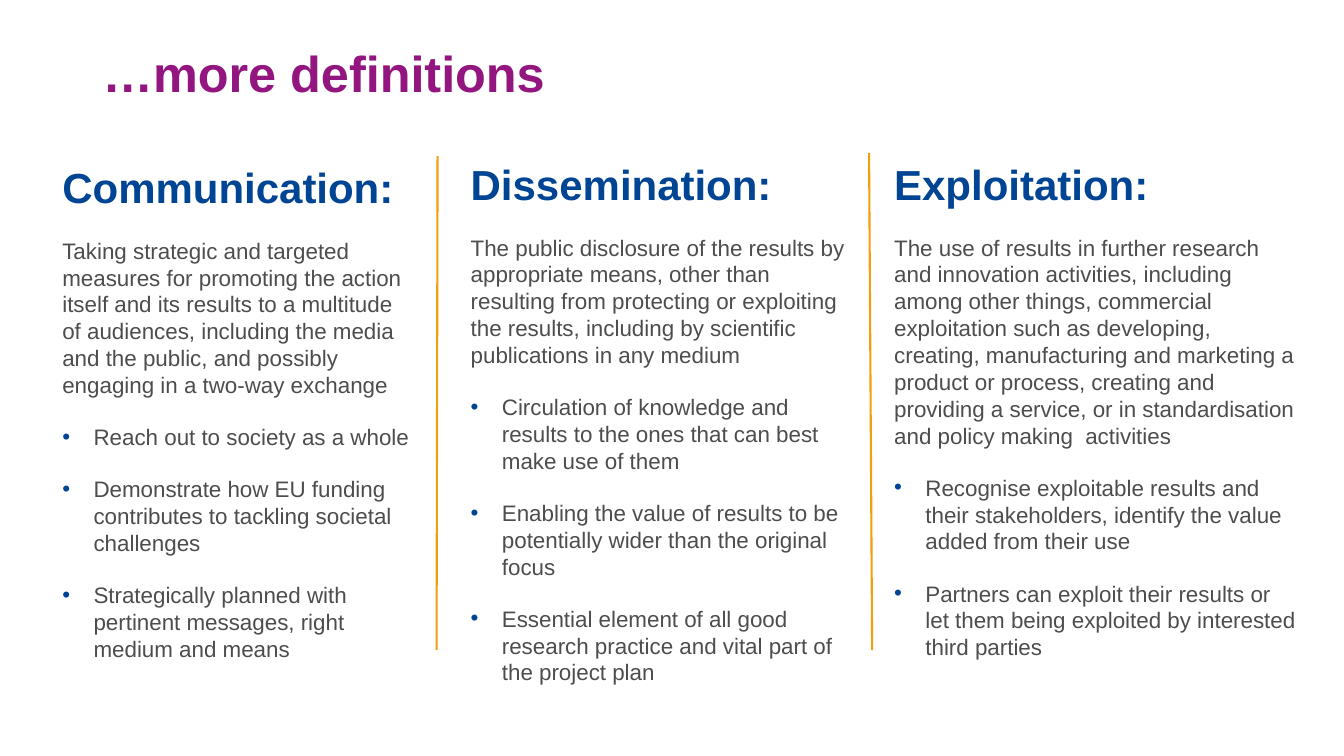
from lxml import etree
from pptx import Presentation
from pptx.dml.color import RGBColor
from pptx.enum.shapes import MSO_CONNECTOR
from pptx.enum.text import MSO_ANCHOR
from pptx.oxml.ns import qn
from pptx.util import Inches, Pt

STRAIGHT = MSO_CONNECTOR.STRAIGHT
BOTTOM = MSO_ANCHOR.BOTTOM
FONT = "Arial"
BLUE, GREY, PURPLE, ORANGE = "004494", "4D4D4D", "931680", "F39E0C"

COLUMNS = [
    ((0.52, 1.55, 3.7, 4.9), "Communication:",
     "Taking strategic and targeted measures for promoting the action itself "
     "and its results to a multitude of audiences, including the media and "
     "the public, and possibly engaging in a two-way exchange",
     ["Reach out to society as a whole",
      "Demonstrate how EU funding contributes to tackling societal challenges",
      "Strategically planned with pertinent messages, right medium and means"]),
    ((4.57, 1.52, 3.93, 4.93), "Dissemination:",
     "The public disclosure of the results by appropriate means, other than "
     "resulting from protecting or exploiting the results, including by "
     "scientific publications in any medium",
     ["Circulation of knowledge and results to the ones that can best make "
      "use of them",
      "Enabling the value of results to be potentially wider than the "
      "original focus",
      "Essential element of all good research practice and vital part of the "
      "project plan"]),
    ((8.77, 1.52, 4.21, 4.93), "Exploitation:",
     "The use of results in further research and innovation activities, "
     "including among other things, commercial exploitation such as "
     "developing, creating, manufacturing and marketing a product or process, "
     "creating and providing a service, or in standardisation and policy "
     "making  activities",
     ["Recognise exploitable results and their stakeholders, identify the "
      "value added from their use",
      "Partners can exploit their results or let them being exploited by "
      "interested third parties"]),
]
RULES = [(4.34, 1.55, 4.33, 6.45), (8.62, 1.52, 8.65, 6.45)]


def color(value):
    return RGBColor.from_string(value)


def add_box(slide, place):
    frame = slide.shapes.add_textbox(*map(Inches, place)).text_frame
    frame.word_wrap = True
    return frame


def style(para, size, shade, bold, after=0):
    para.space_after = Pt(after)
    for run in para.runs:
        run.font.name = FONT
        run.font.size = Pt(size)
        run.font.bold = bold
        run.font.color.rgb = color(shade)


def add_bullet(para):
    props = para._p.get_or_add_pPr()
    props.set("marL", str(Inches(0.31)))
    props.set("indent", str(-Inches(0.31)))
    tint = etree.SubElement(props, qn("a:buClr"))
    etree.SubElement(tint, qn("a:srgbClr"), val=BLUE)
    etree.SubElement(props, qn("a:buFont"), typeface=FONT)
    etree.SubElement(props, qn("a:buChar"), char="•")


def add_title(slide, text):
    frame = add_box(slide, (0.92, 0.51, 11.5, 0.52))
    frame.vertical_anchor = BOTTOM
    frame.margin_bottom = 0
    frame.text = text
    title = frame.paragraphs[0]
    title.line_spacing = 0.9
    style(title, 36, PURPLE, True)


def add_column(slide, place, head, body, points):
    frame = add_box(slide, place)
    frame.text = "\n".join([head, body, *points])
    first, *rest = frame.paragraphs
    style(first, 30, BLUE, True, 18)
    for para in rest[1:]:
        add_bullet(para)
    for para in rest:
        style(para, 16, GREY, False, 18)


def add_rule(slide, ends):
    rule = slide.shapes.add_connector(STRAIGHT, *map(Inches, ends))
    rule.line.color.rgb = color(ORANGE)
    rule.line.width = Pt(1.5)
    etree.SubElement(rule._element.spPr, qn("a:effectLst"))


def main():
    deck = Presentation()
    deck.slide_width = Inches(13.33)
    deck.slide_height = Inches(7.5)
    slide = deck.slides.add_slide(deck.slide_layouts[6])
    add_title(slide, "…more definitions")
    for column in COLUMNS:
        add_column(slide, *column)
    for ends in RULES:
        add_rule(slide, ends)
    deck.save("out.pptx")


if __name__ == "__main__":
    main()
